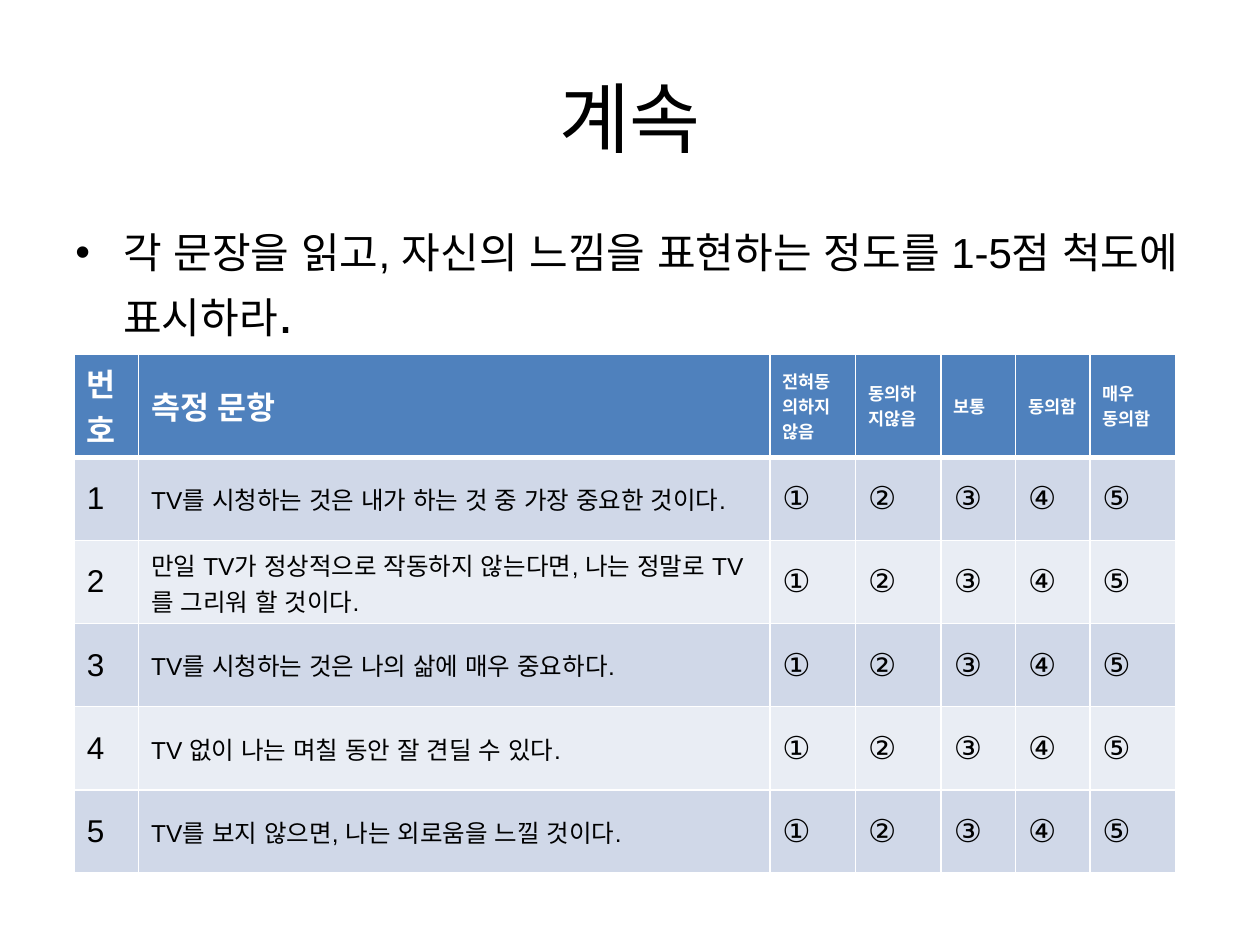
import pptx
import pptx.dml.color
import pptx.enum.lang
import pptx.enum.text
import pptx.oxml
import pptx.oxml.ns
import pptx.util
from pptx.util import Inches

LATIN = "Arial"
KOREAN = "Noto Sans CJK KR"
SCALE = "①②③④⑤"
HEADINGS = ["번호", "측정 문항", "전혀동의하지않음", "동의하지않음", "보통", "동의함", "매우\n동의함"]
QUESTIONS = [
    "TV를 시청하는 것은 내가 하는 것 중 가장 중요한 것이다.",
    "만일 TV가 정상적으로 작동하지 않는다면, 나는 정말로 TV를 그리워 할 것이다.",
    "TV를 시청하는 것은 나의 삶에 매우 중요하다.",
    "TV 없이 나는 며칠 동안 잘 견딜 수 있다.",
    "TV를 보지 않으면, 나는 외로움을 느낄 것이다.",
]
COLUMN_WIDTHS = [0.51, 5.01, 0.68, 0.68, 0.59, 0.59, 0.68]
ROW_HEIGHTS = [0.82] + [0.66] * len(QUESTIONS)
BANDS = ["D0D8E8", "E9EDF4"]


def color(hex_value):
    """Return the RGB colour of a hex string."""
    return pptx.dml.color.RGBColor.from_string(hex_value)


def add_xml(parent, xml):
    """Append an element of the drawing namespace to its parent."""
    namespace = pptx.oxml.ns.nsdecls("a")
    parent.append(pptx.oxml.parse_xml(xml.replace("X", namespace, 1)))


def add_run(paragraph, wording, size, hex_value="000000", bold=False, latin=LATIN):
    """Add a formatted run with Latin and Korean fonts."""
    run = paragraph.add_run()
    run.text = wording
    values = {
        "name": latin,
        "size": pptx.util.Pt(size),
        "bold": bold,
        "language_id": pptx.enum.lang.MSO_LANGUAGE_ID.KOREAN,
    }
    for attribute, value in values.items():
        setattr(run.font, attribute, value)
    run.font.color.rgb = color(hex_value)
    add_xml(run.font._element, f'<a:ea X typeface="{KOREAN}"/>')


def add_text_frame(slide, left, top, width, height, anchor):
    """Add a wrapping text box and return its text frame."""
    box = slide.shapes.add_textbox(Inches(left), Inches(top), Inches(width), Inches(height))
    box.text_frame.word_wrap = True
    box.text_frame.vertical_anchor = anchor
    return box.text_frame


def add_title(slide):
    """Add the centred slide title."""
    frame = add_text_frame(slide, 0.5, 0.3, 9, 1.25, pptx.enum.text.MSO_ANCHOR.MIDDLE)
    title = frame.paragraphs[0]
    title.alignment = pptx.enum.text.PP_ALIGN.CENTER
    add_run(title, "계속", 44, latin=KOREAN)


def add_instruction(slide):
    """Add the bulleted instruction above the questionnaire."""
    frame = add_text_frame(slide, 0.5, 1.75, 9, 4.95, pptx.enum.text.MSO_ANCHOR.TOP)
    instruction = frame.paragraphs[0]
    instruction.space_before = pptx.util.Pt(5)
    properties = instruction._p.get_or_add_pPr()
    properties.set("marL", str(Inches(0.38)))
    properties.set("indent", str(Inches(-0.38)))
    add_xml(properties, '<a:buFont X typeface="Arial"/>')
    add_xml(properties, '<a:buChar X char="•"/>')
    add_run(instruction, "각 문장을 읽고, 자신의 느낌을 표현하는 정도를 1-5점 척도에 표시하라", 24)
    add_run(instruction, ".", 32)


def fill_cell(cell, wording, size, fill, hex_value="000000", bold=False, bottom=1):
    """Write one table cell with white borders and a solid fill."""
    cell.vertical_anchor = pptx.enum.text.MSO_ANCHOR.MIDDLE
    for index, line in enumerate(wording.split("\n")):
        frame = cell.text_frame
        paragraph = frame.add_paragraph() if index else frame.paragraphs[0]
        add_run(paragraph, line, size, hex_value, bold)
    for side, width in {"L": 1, "R": 1, "T": 1, "B": bottom}.items():
        add_xml(
            cell._tc.get_or_add_tcPr(),
            f'<a:ln{side} X w="{pptx.util.Pt(width)}"><a:solidFill>'
            f'<a:srgbClr val="FFFFFF"/></a:solidFill></a:ln{side}>',
        )
    cell.fill.solid()
    cell.fill.fore_color.rgb = color(fill)


def add_questionnaire(slide):
    """Add the table of questions with a five-point scale."""
    table = slide.shapes.add_table(
        len(ROW_HEIGHTS), len(COLUMN_WIDTHS), Inches(0.59), Inches(2.81),
        Inches(sum(COLUMN_WIDTHS)), Inches(sum(ROW_HEIGHTS)),
    ).table
    for column, width in zip(table.columns, COLUMN_WIDTHS):
        column.width = Inches(width)
    for row, height in zip(table.rows, ROW_HEIGHTS):
        row.height = Inches(height)
    for index, heading in enumerate(HEADINGS):
        size = 18 if index < 2 else 10
        fill_cell(table.cell(0, index), heading, size, "4F81BD", "FFFFFF", True, 3)
    for number, question in enumerate(QUESTIONS, 1):
        for index, wording in enumerate([str(number), question, *SCALE]):
            size = 14 if index == 1 else 18
            fill_cell(table.cell(number, index), wording, size, BANDS[(number - 1) % 2])


def main():
    """Build and save the questionnaire slide."""
    presentation = pptx.Presentation()
    presentation.slide_width = Inches(10)
    presentation.slide_height = Inches(7.5)
    slide = presentation.slides.add_slide(presentation.slide_layouts[6])
    add_title(slide)
    add_instruction(slide)
    add_questionnaire(slide)
    presentation.save("out.pptx")


if __name__ == "__main__":
    main()
